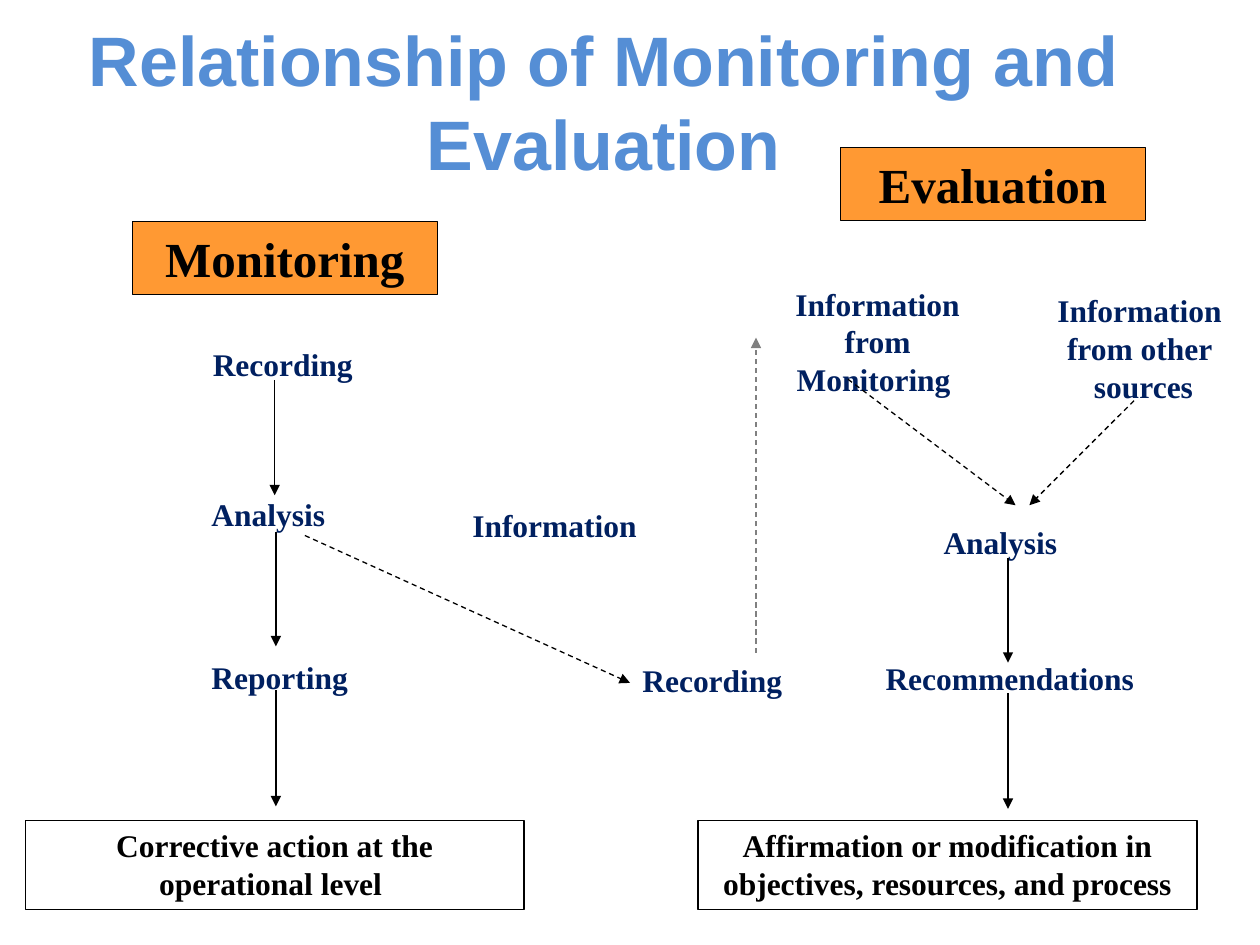
from lxml import etree
from pptx import Presentation
from pptx import util as u
from pptx.dml.color import RGBColor
from pptx.enum import dml, shapes, text
from pptx.oxml import ns

HUES = {"title": "558ED5", "head": "FF9933", "step": "002060",
        "ink": "000000", "paper": "FFFFFF", "faint": "808080"}
SERIF = "Times New Roman"


def hue(name):
    return RGBColor.from_string(HUES[name])


def write(shape, words, size, color, font=SERIF, center=True, wrap=True):
    frame = shape.text_frame
    frame.text = words
    frame.word_wrap = wrap
    for para in frame.paragraphs:
        para.alignment = text.PP_ALIGN.CENTER if center else text.PP_ALIGN.LEFT
        for run in para.runs:
            run.font.name, run.font.size, run.font.bold = font, u.Pt(size), True
            run.font.color.rgb = hue(color)
    return frame


def label(slide, words, x, y, w, h=0.4, size=18, color="step", pad=0.1, **style):
    box = slide.shapes.add_textbox(*map(u.Inches, (x, y, w, h)))
    frame = write(box, words, size, color, **style)
    frame.margin_left = frame.margin_right = u.Inches(pad)
    frame.auto_size = text.MSO_AUTO_SIZE.SHAPE_TO_FIT_TEXT


def panel(slide, words, x, y, w, h, fill, size, anchor, wrap):
    box = slide.shapes.add_shape(shapes.MSO_SHAPE.RECTANGLE,
                                 *map(u.Inches, (x, y, w, h)))
    box.shadow.inherit = False
    box.fill.solid()
    box.fill.fore_color.rgb = hue(fill)
    box.line.color.rgb = hue("ink")
    box.line.width = u.Pt(0.75)
    write(box, words, size, "ink", wrap=wrap).vertical_anchor = anchor


def arrow(slide, x1, y1, x2, y2, dash=False, color="ink"):
    link = slide.shapes.add_connector(shapes.MSO_CONNECTOR.STRAIGHT,
                                      *map(u.Inches, (x1, y1, x2, y2)))
    link.line.color.rgb = hue(color)
    link.line.width = u.Pt(0.75)
    if dash:
        link.line.dash_style = dml.MSO_LINE.DASH
    tip = etree.SubElement(link.line._get_or_add_ln(), ns.qn("a:tailEnd"))
    tip.set("type", "triangle")
    etree.SubElement(link._element.spPr, ns.qn("a:effectLst"))


def main():
    deck = Presentation()
    deck.slide_width, deck.slide_height = u.Inches(10), u.Inches(7.5)
    slide = deck.slides.add_slide(deck.slide_layouts[6])

    # Title
    label(slide, "Relationship of Monitoring and Evaluation", 0.58, 0.08,
          8.42, 1.43, size=40, color="title", font="Arial")

    # Column heads
    for words, x, y in (("Monitoring", 1.05, 1.76), ("Evaluation", 6.67, 1.17)):
        panel(slide, words, x, y, 2.42, 0.58, "head", 28,
              text.MSO_ANCHOR.MIDDLE, False)

    # Outcomes
    for words, x in (
            ("Corrective action at the operational level ", 0.2),
            ("Affirmation or modification in objectives, resources, and process", 5.54)):
        panel(slide, words, x, 6.51, 3.96, 0.71, "paper", 18,
              text.MSO_ANCHOR.TOP, True)

    # Steps
    for words, x, y, w in (("Recording", 1.59, 2.69, 1.38),
                           ("Analysis", 1.58, 3.88, 1.16),
                           ("Reporting", 1.58, 5.17, 1.35),
                           ("Information", 3.65, 3.97, 1.57),
                           ("Recording", 5, 5.2, 1.38),
                           ("Analysis", 7.39, 4.1, 1.16),
                           ("Recommendations", 6.93, 5.18, 2.33)):
        label(slide, words, x, y, w, center=False, wrap=False)

    # Sources of information
    label(slide, "Information from\nMonitoring ", 5.92, 2.21, 2.09, 0.71, pad=0.2)
    label(slide, "Information \nfrom other \nsources", 8.29, 2.26, 1.57, 1.31,
          wrap=False)

    # Flow down each column
    for x, top, end in ((2.18, 3.02, 3.93), (2.19, 4.22, 5.13), (2.19, 5.48, 6.4),
                        (8, 4.43, 5.26), (8, 5.5, 6.42)):
        arrow(slide, x, top, x, end)

    # Flow of information
    for ends in ((2.42, 4.25, 5, 5.42), (9, 3.18, 8.17, 4.01),
                 (6.73, 3.01, 8.06, 4.01)):
        arrow(slide, *ends, dash=True)
    arrow(slide, 6, 5.18, 6, 2.68, dash=True, color="faint")

    deck.save("out.pptx")


if __name__ == "__main__":
    main()
